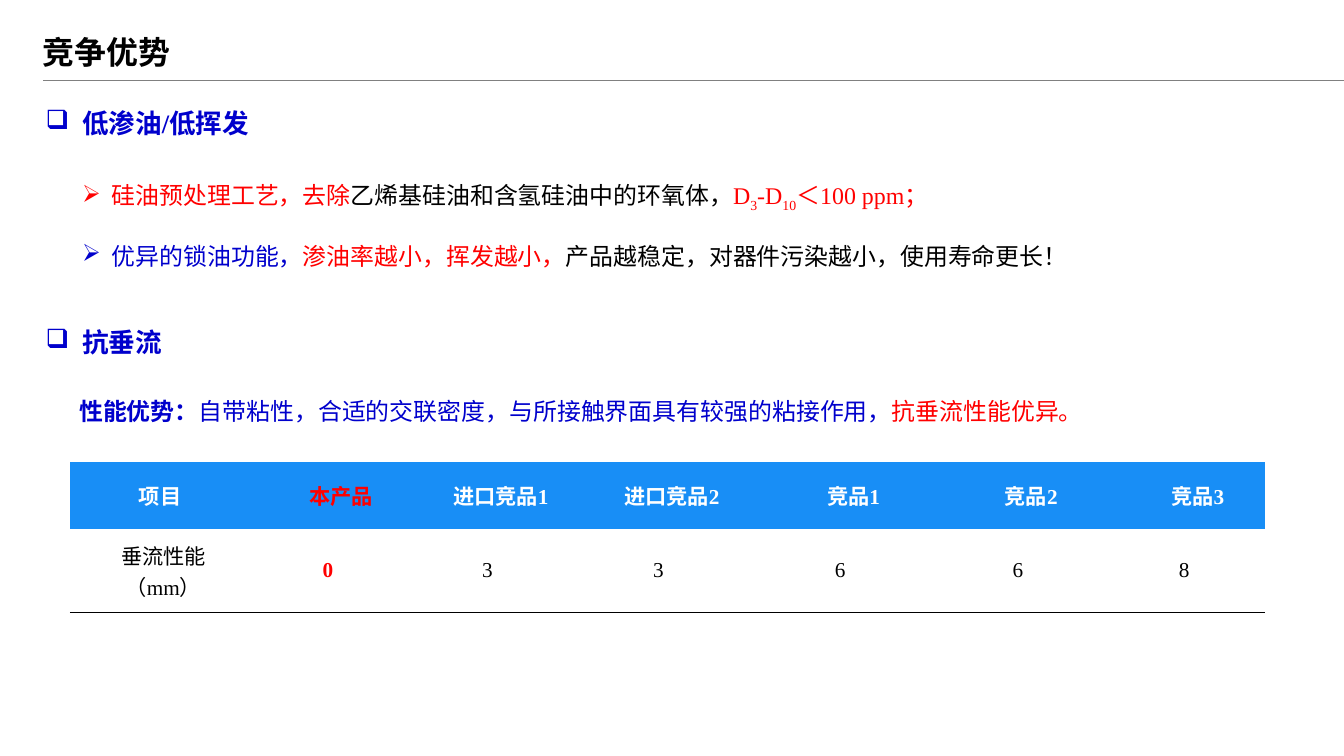
from dataclasses import dataclass

from lxml.etree import SubElement
from pptx import Presentation
from pptx.dml.color import RGBColor
from pptx.enum.shapes import MSO_CONNECTOR
from pptx.enum.text import MSO_ANCHOR, MSO_AUTO_SIZE, PP_ALIGN
from pptx.oxml.ns import qn
from pptx.util import Inches, Pt

BLUE = "0000CC"
RED = "FF0000"
BLACK = "000000"
WHITE = "FFFFFF"
GRAY = "808080"
HEAD = "188EF6"
LATIN = "Times New Roman"
ASIAN = "Noto Sans CJK SC"
NO_STYLE = "{2D5ABB26-0587-4C30-8999-92F81FD0307C}"


@dataclass
class Run:
    text: str
    color: str = BLACK
    bold: bool = False
    base: int = 0


@dataclass
class Para:
    runs: list[Run]
    size: float = 18
    font: str = LATIN
    mark: str = ""
    left: float = 0
    hang: float = 0
    space: float = 1
    align: PP_ALIGN = PP_ALIGN.LEFT


@dataclass
class Box:
    left: float
    top: float
    width: float
    height: float
    paras: list[Para]
    wrap: bool = True


@dataclass
class Column:
    width: float
    name: str
    value: str
    tight: bool = False
    color: str = WHITE
    shift: float = 0.28


def paint(code: str) -> RGBColor:
    return RGBColor.from_string(code)


def write(par, item: Para) -> None:
    props = par._p.get_or_add_pPr()
    props.set("marL", str(Inches(item.left)))
    props.set("indent", str(-Inches(item.hang)))
    if item.mark:
        SubElement(props, qn("a:buChar")).set("char", item.mark)
    par.line_spacing = item.space
    par.alignment = item.align
    for part in item.runs:
        run = par.add_run()
        run.text = part.text
        run.font.size = Pt(item.size)
        run.font.bold = part.bold
        run.font.name = item.font
        run.font.color.rgb = paint(part.color)
        props = run._r.get_or_add_rPr()
        SubElement(props, qn("a:ea")).set("typeface", ASIAN)
        if part.base:
            props.set("baseline", str(part.base * 1000))


def add_box(slide, box: Box) -> None:
    place = map(Inches, (box.left, box.top, box.width, box.height))
    frame = slide.shapes.add_textbox(*place).text_frame
    frame.word_wrap = box.wrap
    frame.auto_size = MSO_AUTO_SIZE.SHAPE_TO_FIT_TEXT
    for num, item in enumerate(box.paras):
        par = frame.add_paragraph() if num else frame.paragraphs[0]
        write(par, item)


def add_rule(slide) -> None:
    ends = map(Inches, (0.45, 0.84, 14.06, 0.84))
    rule = slide.shapes.add_connector(MSO_CONNECTOR.STRAIGHT, *ends)
    rule.line.color.rgb = paint(GRAY)
    rule.line.width = Pt(0.5)
    SubElement(rule._element.spPr, qn("a:effectLst"))


def underline(cell) -> None:
    props = cell._tc.get_or_add_tcPr()
    edge = SubElement(props, qn("a:lnB"), w=str(Pt(1)))
    fill = SubElement(edge, qn("a:solidFill"))
    SubElement(fill, qn("a:srgbClr")).set("val", BLACK)
    props.insert(0, edge)


def fill_cell(cell, run: Run, left: float, space: float) -> None:
    cell.vertical_anchor = MSO_ANCHOR.MIDDLE
    item = Para([run], 16, left=left, space=space, align=PP_ALIGN.CENTER)
    write(cell.text_frame.paragraphs[0], item)


def add_grid(slide, cols: list[Column]) -> None:
    place = map(Inches, (0.73, 4.83, 12.52, 1.57))
    table = slide.shapes.add_table(2, len(cols), *place).table
    table.first_row = False
    table.horz_banding = False
    table._tbl.tblPr.find(qn("a:tableStyleId")).text = NO_STYLE
    for row, height in zip(table.rows, (0.71, 0.87)):
        row.height = Inches(height)
    for num, col in enumerate(cols):
        table.columns[num].width = Inches(col.width)
        top, low = table.cell(0, num), table.cell(1, num)
        top.fill.solid()
        top.fill.fore_color.rgb = paint(HEAD)
        if col.tight:
            top.margin_left = top.margin_right = 0
            top.margin_top = top.margin_bottom = 0
        fill_cell(top, Run(col.name, col.color, True), col.shift, 1)
        low.fill.background()
        underline(low)
        ours = col.color == RED
        run = Run(col.value, RED if ours else BLACK, ours)
        label = num == 0
        fill_cell(low, run, 0.07 if label else 0, 1 if label else 0.9)


def topic(text: str) -> Para:
    return Para([Run(text, BLUE, True)], 20, mark="❑", left=0.38, hang=0.38)


def point(runs: list[Run]) -> Para:
    return Para(runs, mark="➢", left=0.31, hang=0.31, space=2)


TITLE = Para([Run("竞争优势", BLACK, True)], 24, ASIAN)
OIL = point([
    Run("硅油预处理工艺，去除", RED),
    Run("乙烯基硅油和含氢硅油中的环氧体，"),
    Run("D", RED),
    Run("3", RED, base=-25),
    Run("-D", RED),
    Run("10", RED, base=-25),
    Run("＜100 ppm；", RED),
])
LOCK = point([
    Run("优异的锁油功能，", BLUE),
    Run("渗油率越小，挥发越小，", RED),
    Run("产品越稳定，对器件污染越小，使用寿命更长！"),
])
GAIN = Para([
    Run("性能优势：", BLUE, True),
    Run("自带粘性，合适的交联密度，与所接触界面具有较强的粘接作用，", BLUE),
    Run("抗垂流性能优异。", RED),
], space=1.2, align=PP_ALIGN.JUSTIFY)

BOXES = [
    Box(0.35, 0.29, 1.56, 0.5, [TITLE], wrap=False),
    Box(0.38, 1.07, 3.18, 0.44, [topic("低渗油/低挥发")]),
    Box(0.76, 1.5, 12.91, 1.22, [OIL, LOCK]),
    Box(0.38, 3.36, 2.65, 0.44, [topic("抗垂流")]),
    Box(0.73, 4.04, 11.81, 0.43, [GAIN]),
]
COLS = [
    Column(1.89, "项目", "垂流性能（mm）", shift=0),
    Column(1.62, "本产品", "0", True, RED),
    Column(1.72, "进口竞品1", "3", True),
    Column(1.86, "进口竞品2", "3"),
    Column(1.94, "竞品1", "6"),
    Column(1.78, "竞品2", "6", True),
    Column(1.7, "竞品3", "8", True),
]


def main() -> None:
    deck = Presentation()
    deck.slide_width = Inches(14.06)
    deck.slide_height = Inches(7.91)
    slide = deck.slides.add_slide(deck.slide_layouts[6])
    add_rule(slide)
    for box in BOXES:
        add_box(slide, box)
    add_grid(slide, COLS)
    deck.save("out.pptx")


if __name__ == "__main__":
    main()
